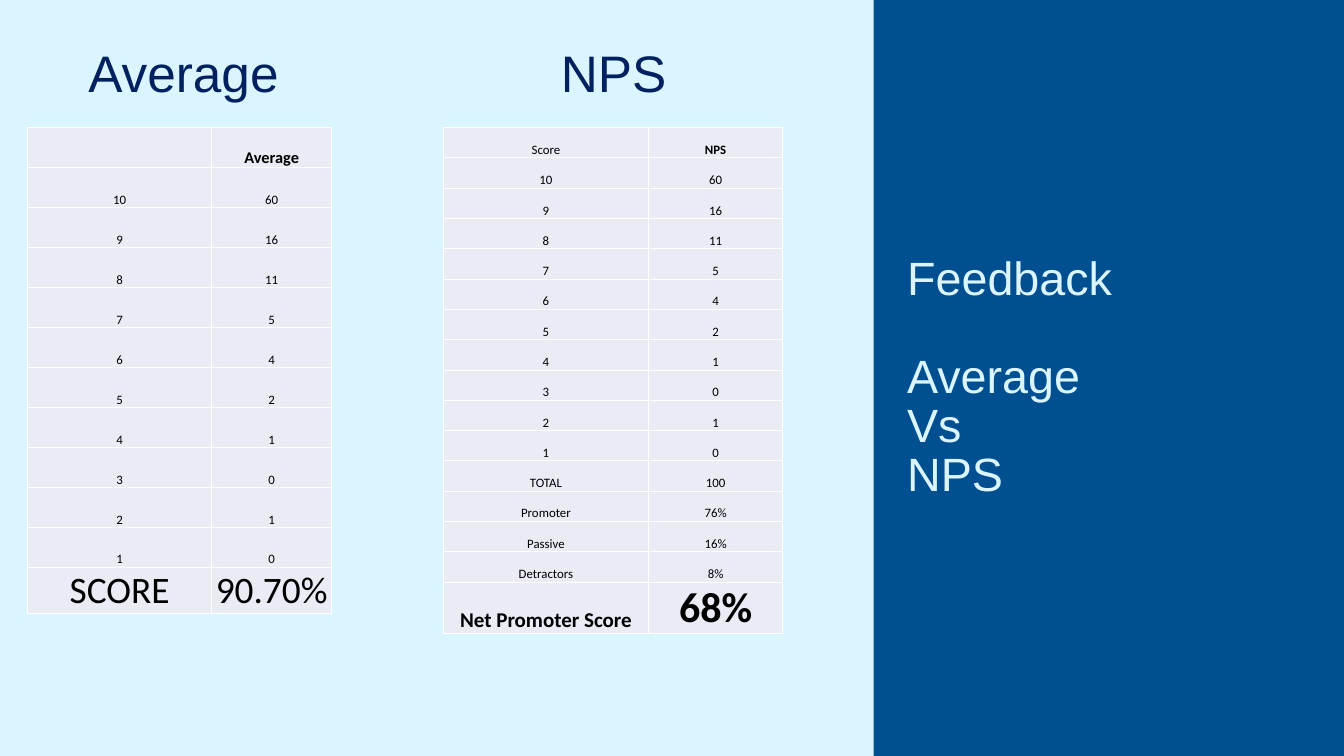
from lxml import etree
from pptx import Presentation
from pptx.dml.color import RGBColor
from pptx.enum import shapes, text
from pptx.oxml import ns
from pptx.util import Inches, Pt

COLORS = {"sky": "DBF5FF", "blue": "004F91", "navy": "002060",
          "cell": "E9EBF5", "border": "FFFFFF", "ink": "000000"}


def add_span(para, words, size, font, color, bold=False):
    span = para.add_run()
    span.text = words
    span.font.size = Pt(size)
    span.font.name = font
    span.font.bold = bold
    span.font.color.rgb = RGBColor.from_string(COLORS[color])


def style_cell(cell):
    cell.margin_left = cell.margin_right = cell.margin_top = Inches(0.01)
    cell.margin_bottom = 0
    cell.vertical_anchor = text.MSO_ANCHOR.BOTTOM
    properties = cell._tc.get_or_add_tcPr()
    for side in ("a:lnL", "a:lnR", "a:lnT", "a:lnB"):
        line = etree.SubElement(properties, ns.qn(side), w=str(Pt(1)))
        fill = etree.SubElement(line, ns.qn("a:solidFill"))
        etree.SubElement(fill, ns.qn("a:srgbClr"), val=COLORS["border"])
    cell.fill.solid()
    cell.fill.fore_color.rgb = RGBColor.from_string(COLORS["cell"])


deck = Presentation()
deck.slide_width, deck.slide_height = Inches(16), Inches(9)
page = deck.slides.add_slide(deck.slide_layouts[6])
page.background.fill.solid()
page.background.fill.fore_color.rgb = RGBColor.from_string(COLORS["sky"])

# Side panel
panel = page.shapes.add_shape(shapes.MSO_SHAPE.RECTANGLE,
                              Inches(10.4), 0, Inches(5.6), Inches(9))
panel.shadow.inherit = False
panel.fill.solid()
panel.fill.fore_color.rgb = RGBColor.from_string(COLORS["blue"])
panel.line.fill.background()

# Slide title on the panel
title = page.shapes.add_textbox(Inches(10.4), 0, Inches(4.96), Inches(9)).text_frame
title.word_wrap = True
title.vertical_anchor = text.MSO_ANCHOR.MIDDLE
title.margin_left = Inches(0.4)
title.margin_top = title.margin_right = title.margin_bottom = 0
for index, words in enumerate(["Feedback", "Average", "Vs", "NPS"]):
    para = title.add_paragraph() if index else title.paragraphs[0]
    para.line_spacing = Pt(42)
    if words == "Average":
        para.space_before = Pt(42)
    add_span(para, words, 40, "Arial", "sky")

# Score tables: each cell is (words, size, bold)
counts = [60, 16, 11, 5, 4, 2, 1, 0, 1, 0]
score_rows = [[(str(10 - index), 11, False), (str(count), 11, False)]
              for index, count in enumerate(counts)]
summary = [("TOTAL", "100"), ("Promoter", "76%"), ("Passive", "16%"), ("Detractors", "8%")]
summary_rows = [[(words, 11, False) for words in row] for row in summary]

average_rows = [[("", 14, False), ("Average", 14, True)], *score_rows,
                [("SCORE", 32, False), ("90.70%", 32, False)]]
nps_rows = [[("Score", 11, False), ("NPS", 11, True)], *score_rows, *summary_rows,
            [("Net Promoter Score", 18, True), ("68%", 36, True)]]

tables = [(0.33, (2.19, 1.43), 0.476, 0.55, average_rows),
          (5.28, (2.44, 1.6), 0.361, 0.61, nps_rows)]
for left, widths, row_height, last_height, rows in tables:
    height = row_height * (len(rows) - 1) + last_height
    table = page.shapes.add_table(len(rows), 2, Inches(left), Inches(1.52),
                                  Inches(sum(widths)), Inches(height)).table
    table.first_row = table.horz_banding = False
    for column, width in zip(table.columns, widths):
        column.width = Inches(width)
    for row in table.rows:
        row.height = Inches(row_height)
    table.rows[len(rows) - 1].height = Inches(last_height)
    for row, entries in zip(table.rows, rows):
        for cell, (words, size, bold) in zip(row.cells, entries):
            style_cell(cell)
            para = cell.text_frame.paragraphs[0]
            para.alignment = text.PP_ALIGN.CENTER
            if words:
                add_span(para, words, size, "Calibri", "ink", bold)

# Table headings
for left, words in [(0.64, "Average"), (5.76, "NPS")]:
    heading = page.shapes.add_textbox(Inches(left), Inches(0.52),
                                      Inches(3.09), Inches(1.4)).text_frame
    heading.word_wrap = True
    para = heading.paragraphs[0]
    para.alignment = text.PP_ALIGN.CENTER
    para.line_spacing = 0.9
    add_span(para, words, 44, "Arial", "navy")

deck.save("out.pptx")
